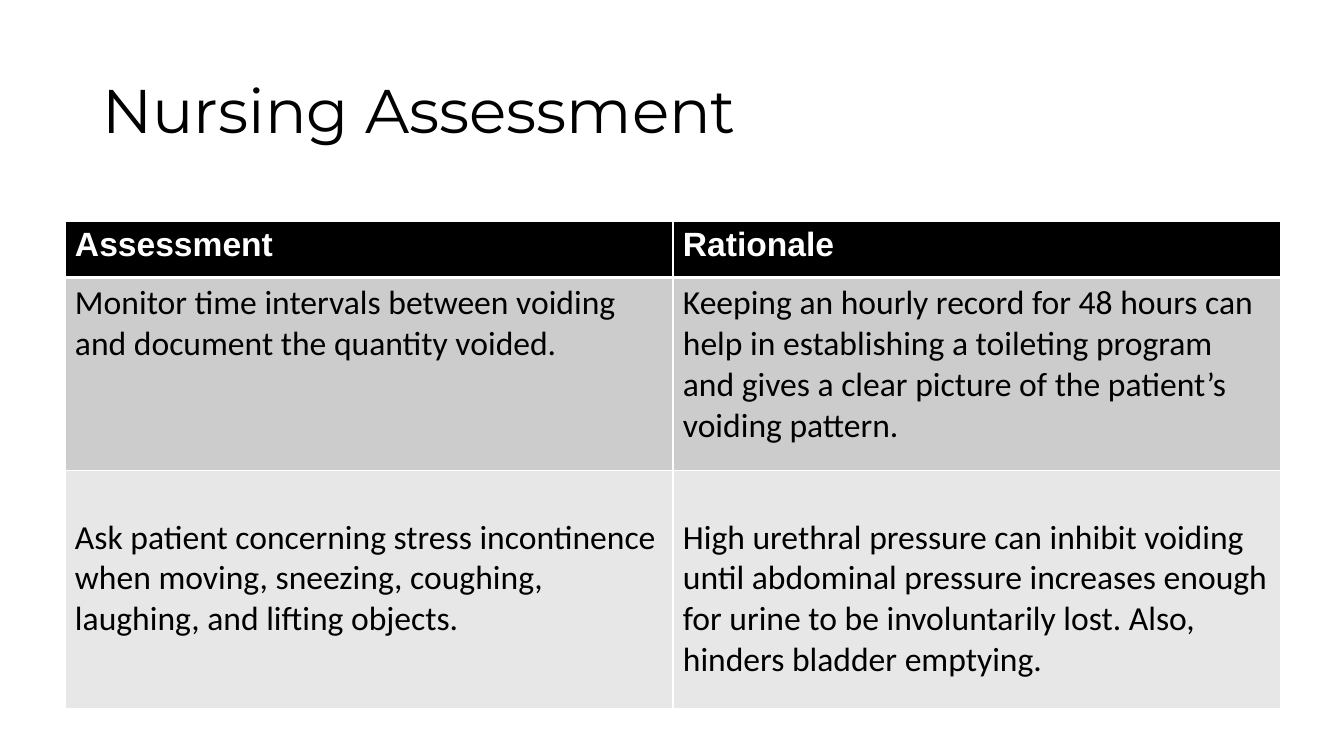
import pptx
import pptx.dml.color
import pptx.enum.text
import pptx.oxml
import pptx.oxml.ns
import pptx.util

Cm = pptx.util.Cm
Pt = pptx.util.Pt

TITLE = "Nursing Assessment"
ROWS = [
    ("Assessment", "Rationale"),
    ("Monitor time intervals between voiding and document the quantity voided.",
     "Keeping an hourly record for 48 hours can help in establishing a toileting "
     "program and gives a clear picture of the patient’s voiding pattern."),
    ("Ask patient concerning stress incontinence when moving, sneezing, coughing, "
     "laughing, and lifting objects.",
     "High urethral pressure can inhibit voiding until abdominal pressure increases "
     "enough for urine to be involuntarily lost. Also, hinders bladder emptying."),
]
# height in cm, top margin in cm, fill, font, text colour, bold, bottom line in pt
STYLES = [
    (1.42, 0.13, "000000", "Arial", "FFFFFF", True, 3),
    (4.86, 0.13, "CCCCCC", "Calibri", "000000", False, 1),
    (6.0, 1.18, "E7E7E7", "Calibri", "000000", False, 1),
]
COL = 15.32


def color(code):
    return pptx.dml.color.RGBColor.from_string(code)


def write(para, text, font, size, code, bold=False):
    run = para.add_run()
    run.text = text
    run.font.name = font
    run.font.size = Pt(size)
    run.font.bold = bold
    run.font.color.rgb = color(code)


def border(cell, side, width):
    """Draw a white line on one side; call before the cell is filled."""
    cell._tc.get_or_add_tcPr().append(pptx.oxml.parse_xml(
        f'<a:ln{side} {pptx.oxml.ns.nsdecls("a")} w="{Pt(width)}">'
        f'<a:solidFill><a:srgbClr val="FFFFFF"/></a:solidFill></a:ln{side}>'))


def main():
    deck = pptx.Presentation()
    deck.slide_width, deck.slide_height = Cm(33.87), Cm(19.05)
    slide = deck.slides.add_slide(deck.slide_layouts[6])

    box = slide.shapes.add_textbox(Cm(2.33), Cm(1.01), Cm(29.21), Cm(3.68))
    frame = box.text_frame
    frame.word_wrap = True
    frame.vertical_anchor = pptx.enum.text.MSO_ANCHOR.MIDDLE
    frame.paragraphs[0].line_spacing = 0.9
    write(frame.paragraphs[0], TITLE, "Montserrat", 44, "000000")

    total = sum(style[0] for style in STYLES)
    table = slide.shapes.add_table(len(ROWS), 2, Cm(1.64), Cm(5.57),
                                   Cm(2 * COL), Cm(total)).table
    for col in table.columns:
        col.width = Cm(COL)

    above = 1
    for r, (texts, style) in enumerate(zip(ROWS, STYLES)):
        high, top, fill, font, ink, bold, below = style
        table.rows[r].height = Cm(high)
        for c, text in enumerate(texts):
            cell = table.cell(r, c)
            cell.margin_left = cell.margin_right = Cm(0.25)
            cell.margin_top, cell.margin_bottom = Cm(top), Cm(0.13)
            for side, width in zip("LRTB", (1, 1, above, below)):
                border(cell, side, width)
            cell.fill.solid()
            cell.fill.fore_color.rgb = color(fill)
            write(cell.text_frame.paragraphs[0], text, font, 24, ink, bold)
        above = below

    deck.save("out.pptx")


if __name__ == "__main__":
    main()
